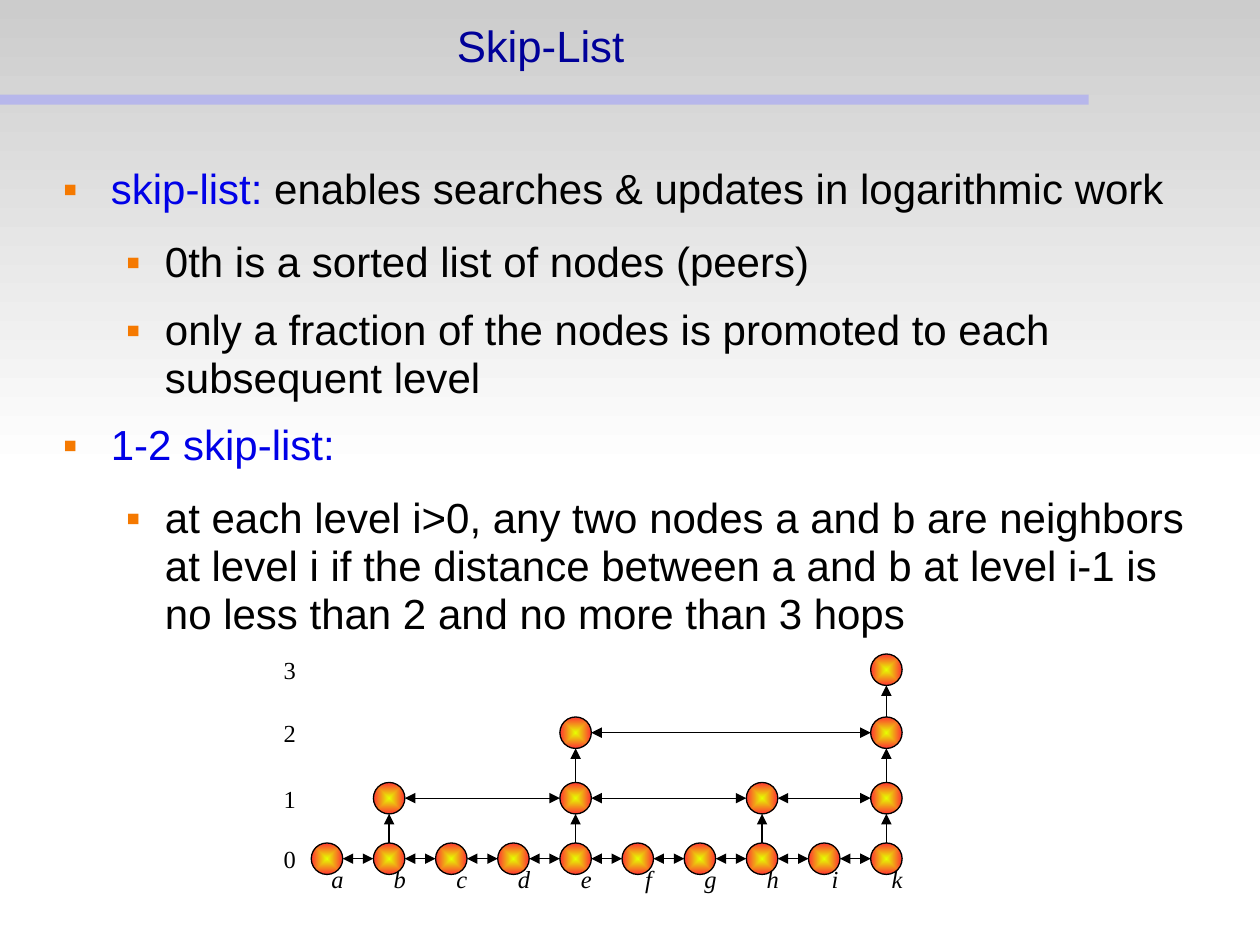
from lxml import etree
from pptx import Presentation
from pptx import util as u
from pptx.dml.color import RGBColor
from pptx.enum import shapes, text
from pptx.oxml.ns import qn

BODY = [
    (0, "skip-list:", " enables searches & updates in logarithmic work"),
    (1, "", "0th is a sorted list of nodes (peers)"),
    (1, "", "only a fraction of the nodes is promoted to each subsequent level"),
    (0, "1-2 skip-list:", ""),
    (1, "", "at each level i>0, any two nodes a and b are neighbors at level i if the "
            "distance between a and b at level i-1 is no less than 2 and no more than 3 hops"),
]
INDENTS = [(0.38, -0.38, 14.2), (0.81, -0.31, 11.4)]  # left margin, first line, space after

KEYS = "abcdefghik"
LEVELS = [KEYS, "behk", "ek", "k"]
LEVEL_TOPS = [6.69, 6.21, 5.69, 5.19]
FIRST_LEFT, PITCH = 2.47, 4.44 / 9
DIAMETER = 0.25
LABEL_WIDTH, LABEL_HEIGHT = 0.3, 0.34


def rgb(color):
    return RGBColor.from_string(color)


def style_font(font, name, size, color, italic=None):
    font.name = name
    font.size = u.Pt(size)
    font.color.rgb = rgb(color)
    font.italic = italic


def set_insets(frame, left, top):
    frame.margin_left = frame.margin_right = u.Inches(left)
    frame.margin_top = frame.margin_bottom = u.Inches(top)


def set_gradient(shape, first, last, from_centre=False):
    """Fill top to bottom, or outwards from the centre."""
    shape.fill.gradient()
    for stop, color in zip(shape.fill.gradient_stops, (first, last)):
        stop.color.rgb = rgb(color)
    if not from_centre:
        shape.fill.gradient_angle = 270
        return
    gradient = shape._element.spPr.find(qn("a:gradFill"))
    gradient.remove(gradient.find(qn("a:lin")))
    shade = etree.SubElement(gradient, qn("a:path"), path="shape")
    etree.SubElement(shade, qn("a:fillToRect"), l="50000", t="50000", r="50000", b="50000")


def add_plain_shape(slide, kind, left, top, width, height):
    shape = slide.shapes.add_shape(
        kind, u.Inches(left), u.Inches(top), u.Inches(width), u.Inches(height))
    shape.shadow.inherit = False
    shape.line.fill.background()
    return shape


def add_backdrop(slide):
    rectangle = shapes.MSO_SHAPE.RECTANGLE
    set_gradient(add_plain_shape(slide, rectangle, 0, 0, 10, 3.75), "CCCCCC", "FFFFFF")
    bar = add_plain_shape(slide, rectangle, 0, 0.75, 8.64, 0.08)
    bar.fill.solid()
    bar.fill.fore_color.rgb = rgb("9999FF")
    color = bar._element.spPr.find(qn("a:solidFill"))[0]
    etree.SubElement(color, qn("a:alpha"), val="50000")


def place_title(slide, wording):
    title = slide.shapes.title
    slide.shapes._spTree.append(title._element)  # in front of the backdrop
    title.left, title.top = u.Inches(0), u.Inches(0)
    title.width, title.height = u.Inches(8.58), u.Inches(0.75)
    frame = title.text_frame
    frame.text = wording
    frame.auto_size = text.MSO_AUTO_SIZE.NONE
    frame.vertical_anchor = text.MSO_ANCHOR.MIDDLE
    set_insets(frame, 0, 0)
    paragraph = frame.paragraphs[0]
    paragraph.alignment = text.PP_ALIGN.CENTER
    paragraph.line_spacing = 0.98
    style_font(paragraph.runs[0].font, "Arial", 25, "000099")


def add_bullet(paragraph, margin, indent):
    properties = paragraph._p.get_or_add_pPr()
    properties.set("marL", str(u.Inches(margin)))
    properties.set("indent", str(u.Inches(indent)))
    color = etree.SubElement(properties, qn("a:buClr"))
    etree.SubElement(color, qn("a:srgbClr"), val="F57900")
    etree.SubElement(properties, qn("a:buFont"), typeface="Arial")
    etree.SubElement(properties, qn("a:buChar"), char="▪")


def add_body(slide):
    box = slide.shapes.add_textbox(u.Inches(0.5), u.Inches(1.3), u.Inches(9), u.Inches(4.95))
    frame = box.text_frame
    frame.word_wrap = True
    set_insets(frame, 0, 0)
    frame.margin_top = u.Inches(0.02)
    for number, (level, term, wording) in enumerate(BODY):
        paragraph = frame.add_paragraph() if number else frame.paragraphs[0]
        margin, indent, space_after = INDENTS[level]
        paragraph.level = level
        paragraph.line_spacing = 0.95
        paragraph.space_after = u.Pt(space_after)
        add_bullet(paragraph, margin, indent)
        for part, color in ((term, "0000E7"), (wording, "000000")):
            if part:
                run = paragraph.add_run()
                run.text = part
                style_font(run.font, "Arial", 24, color)


def add_label(slide, wording, left, top, italic=False):
    box = slide.shapes.add_textbox(
        u.Inches(left), u.Inches(top), u.Inches(LABEL_WIDTH), u.Inches(LABEL_HEIGHT))
    frame = box.text_frame
    frame.text = wording
    frame.word_wrap = False
    paragraph = frame.paragraphs[0]
    paragraph.alignment = text.PP_ALIGN.CENTER
    style_font(paragraph.runs[0].font, "Times New Roman", 14, "000000", italic)


def add_node(slide, left, top):
    node = add_plain_shape(slide, shapes.MSO_SHAPE.OVAL, left, top, DIAMETER, DIAMETER)
    set_gradient(node, "E6FF00", "FF3333", from_centre=True)
    node.line.color.rgb = rgb("000000")
    node.line.width = u.Pt(0.75)


def add_arrow(slide, start, end, both_ways=False):
    points = [u.Inches(value) for value in (*start, *end)]
    arrow = slide.shapes.add_connector(shapes.MSO_CONNECTOR.STRAIGHT, *points)
    arrow.line.color.rgb = rgb("000000")
    arrow.line.width = u.Pt(0.75)
    line = arrow.line._get_or_add_ln()
    if both_ways:
        etree.SubElement(line, qn("a:headEnd"), type="triangle")
    etree.SubElement(line, qn("a:tailEnd"), type="triangle")
    etree.SubElement(arrow._element.spPr, qn("a:effectLst"))


def node_left(key):
    return FIRST_LEFT + PITCH * KEYS.index(key)


def add_skip_list(slide):
    radius = DIAMETER / 2
    for key in KEYS:
        add_label(slide, key, node_left(key) + 0.06, 6.81, italic=True)
    for level, (keys, top) in enumerate(zip(LEVELS, LEVEL_TOPS)):
        add_label(slide, str(level), 2.15, top - 0.04)
        for key in keys:
            add_node(slide, node_left(key), top)
            if level:
                centre = node_left(key) + radius
                add_arrow(slide, (centre, LEVEL_TOPS[level - 1]), (centre, top + DIAMETER))
        for key, neighbor in zip(keys, keys[1:]):
            add_arrow(slide, (node_left(key) + DIAMETER, top + radius),
                      (node_left(neighbor), top + radius), both_ways=True)


def main():
    presentation = Presentation()
    presentation.slide_width = u.Inches(10)
    presentation.slide_height = u.Inches(7.5)
    slide = presentation.slides.add_slide(presentation.slide_layouts[5])
    add_backdrop(slide)
    place_title(slide, "Skip-List")
    add_body(slide)
    add_skip_list(slide)
    presentation.save("out.pptx")


if __name__ == "__main__":
    main()
